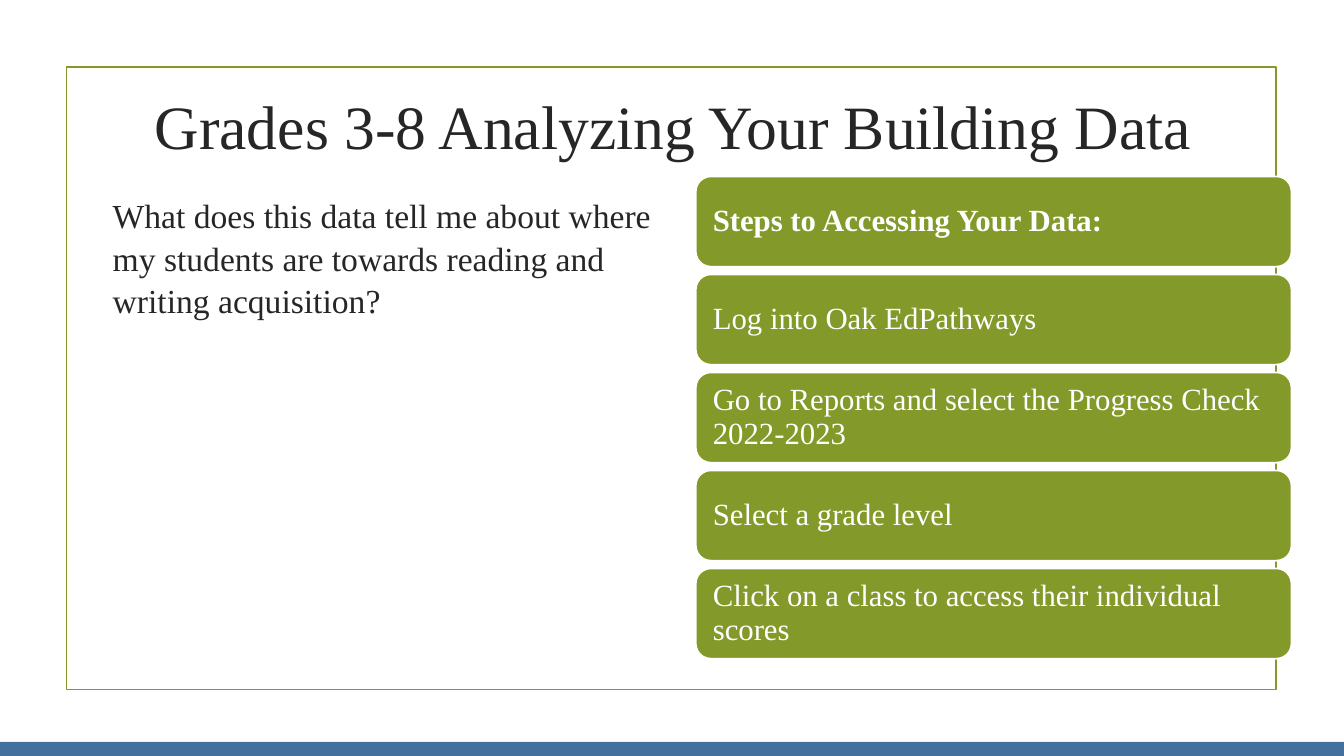
from dataclasses import dataclass

from lxml.etree import SubElement
from pptx import Presentation
from pptx.dml.color import RGBColor
from pptx.enum.shapes import MSO_SHAPE
from pptx.enum.text import MSO_ANCHOR, MSO_AUTO_SIZE, PP_ALIGN
from pptx.oxml.ns import qn
from pptx.util import Pt

FONT = "Times New Roman"
WHITE = RGBColor(0xFF, 0xFF, 0xFF)
GREEN = RGBColor(0x83, 0x99, 0x2A)
BLUE = RGBColor(0x44, 0x70, 0x9D)
DARK = RGBColor(0x26, 0x26, 0x26)


@dataclass(frozen=True)
class Box:
    left: float
    top: float
    width: float
    height: float


@dataclass(frozen=True)
class Step:
    text: str
    bold: bool = False


SLIDE = Box(0, 0, 960, 540)
FRAME = Box(47.5, 48, 864, 444.5)
FOOTER_BAR = Box(0, 530, 960, 10)
TITLE = Box(101.5, 50.5, 894, 74)
QUESTION = Box(71.5, 129, 425.5, 347)
FIRST_STEP = Box(497, 126, 425.5, 64.5)
STEP_PITCH = 70

STEPS = [
    Step("Steps to Accessing Your Data:", bold=True),
    Step("Log into Oak EdPathways"),
    Step("Go to Reports and select the Progress Check 2022-2023"),
    Step("Select a grade level"),
    Step("Click on a class to access their individual scores"),
]


def place(shape, box: Box) -> None:
    shape.left, shape.top = Pt(box.left), Pt(box.top)
    shape.width, shape.height = Pt(box.width), Pt(box.height)


def write(shape, text: str, *, size: float, color: RGBColor, bold: bool = False,
          anchor=MSO_ANCHOR.TOP, spacing: float = 1.0, inset: float = 9) -> None:
    frame = shape.text_frame
    frame.word_wrap = True
    frame.auto_size = MSO_AUTO_SIZE.NONE
    frame.vertical_anchor = anchor
    frame.margin_left = frame.margin_right = Pt(inset)
    frame.margin_top = frame.margin_bottom = Pt(inset)
    frame.text = text
    paragraph = frame.paragraphs[0]
    paragraph.alignment = PP_ALIGN.LEFT
    paragraph.line_spacing = spacing
    paragraph.space_before = Pt(0)
    properties = paragraph._p.get_or_add_pPr()
    properties.set("marL", "0")
    properties.set("indent", "0")
    SubElement(properties, qn("a:buNone"))
    font = paragraph.runs[0].font
    font.name, font.size, font.bold = FONT, Pt(size), bold
    font.color.rgb = color


def add_panel(slide, box: Box, *, kind=MSO_SHAPE.RECTANGLE,
              fill: RGBColor | None = None, line: RGBColor | None = None):
    panel = slide.shapes.add_shape(kind, Pt(box.left), Pt(box.top),
                                   Pt(box.width), Pt(box.height))
    panel.shadow.inherit = False
    if fill is None:
        panel.fill.background()
    else:
        panel.fill.solid()
        panel.fill.fore_color.rgb = fill
    if line is None:
        panel.line.fill.background()
    else:
        panel.line.color.rgb = line
        panel.line.width = Pt(1.25)
    return panel


def add_step(slide, step: Step, index: int) -> None:
    box = Box(FIRST_STEP.left, FIRST_STEP.top + index * STEP_PITCH,
              FIRST_STEP.width, FIRST_STEP.height)
    card = add_panel(slide, box, kind=MSO_SHAPE.ROUNDED_RECTANGLE,
                     fill=GREEN, line=WHITE)
    write(card, step.text, size=22, color=WHITE, bold=step.bold,
          anchor=MSO_ANCHOR.MIDDLE, spacing=0.9)


def main() -> None:
    deck = Presentation()
    deck.slide_width, deck.slide_height = Pt(SLIDE.width), Pt(SLIDE.height)
    slide = deck.slides.add_slide(deck.slide_layouts[1])

    # Frame and footer bar
    add_panel(slide, FRAME, line=GREEN)
    add_panel(slide, FOOTER_BAR, fill=BLUE)

    # Title and guiding question
    title, question = slide.shapes.title, slide.placeholders[1]
    place(title, TITLE)
    write(title, "Grades 3-8 Analyzing Your Building Data", size=44, color=DARK,
          anchor=MSO_ANCHOR.BOTTOM)
    place(question, QUESTION)
    write(question, "What does this data tell me about where my students are "
          "towards reading and writing acquisition?",
          size=24, color=DARK, spacing=1.05)

    # Steps, stacked at an equal pitch
    for index, step in enumerate(STEPS):
        add_step(slide, step, index)

    deck.save("out.pptx")


if __name__ == "__main__":
    main()
